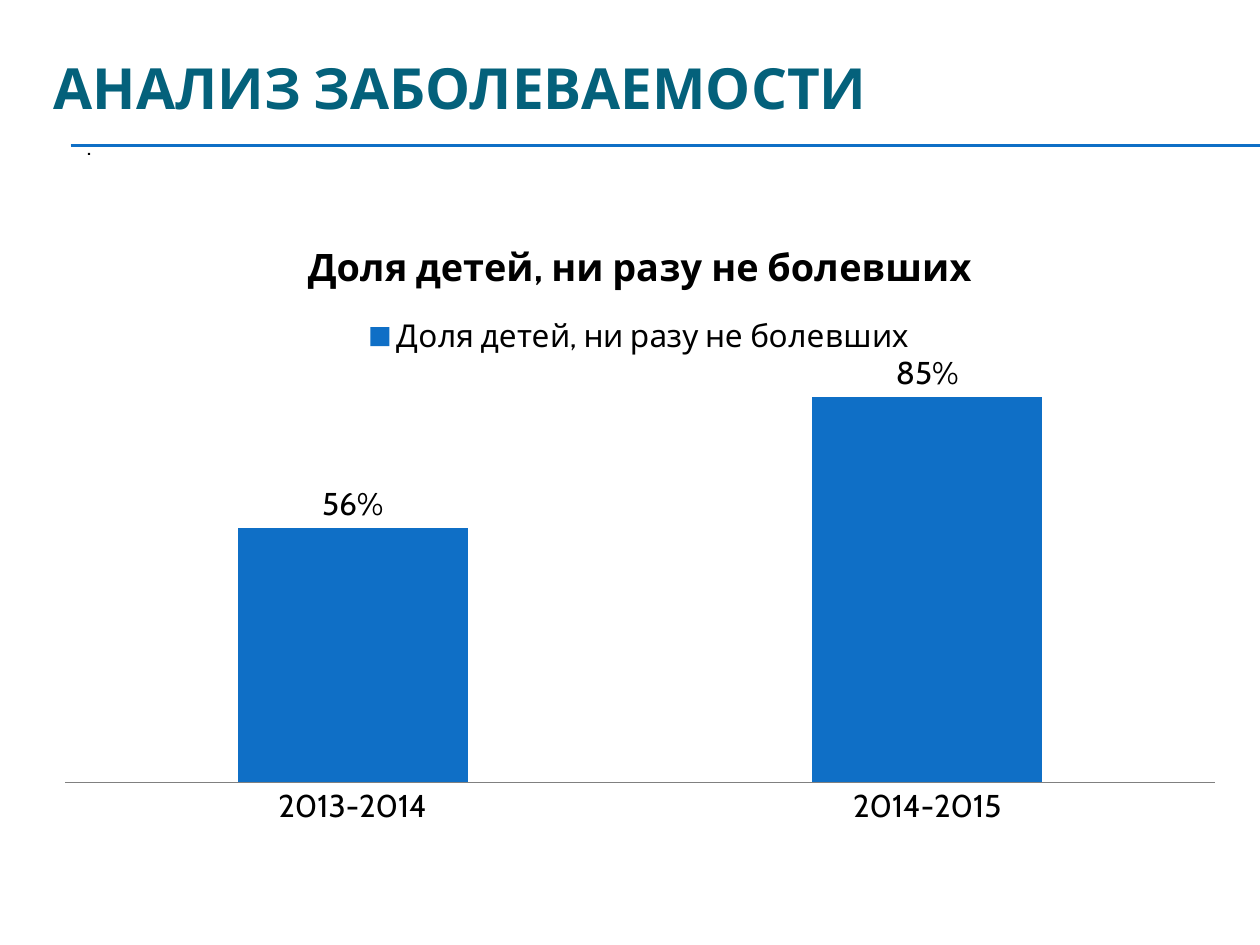
from lxml import etree
from pptx import Presentation, util as u
from pptx.chart.data import CategoryChartData
from pptx.dml.color import RGBColor
from pptx.enum import chart as ch, shapes, text
from pptx.oxml.ns import qn

BLUE, TEAL, BLACK, GREY = "0F6FC6", "04617B", "000000", "808080"


def color(code):
    return RGBColor.from_string(code)


def put(obj, vals):
    for key, val in vals.items():
        setattr(obj, key, val)


class Deck:
    font = "Cabin"

    def __init__(self, wide, high):
        self.prs = Presentation()
        put(self.prs, {"slide_width": u.Inches(wide), "slide_height": u.Inches(high)})
        self.slide = self.prs.slides.add_slide(self.prs.slide_layouts[6])

    def style(self, font, size, code, bold=False):
        put(font, {"name": self.font, "size": u.Pt(size), "bold": bold})
        font.color.rgb = color(code)

    def line(self, x1, y1, x2, y2, code, width):
        rule = self.slide.shapes.add_connector(
            shapes.MSO_CONNECTOR.STRAIGHT, *map(u.Inches, (x1, y1, x2, y2)))
        rule.line.color.rgb = color(code)
        rule.line.width = u.Pt(width)
        etree.SubElement(rule._element.spPr, qn("a:effectLst"))

    def text(self, words, box, size, code, bold=False, anchor=text.MSO_ANCHOR.TOP):
        frame = self.slide.shapes.add_textbox(*map(u.Inches, box)).text_frame
        put(frame, {"word_wrap": True, "vertical_anchor": anchor})
        para = frame.paragraphs[0]
        para.text = words
        for run in para.runs:
            self.style(run.font, size, code, bold)
        self.style(para.font, size, code, bold)

    def columns(self, name, cats, vals, box, size, code):
        data = CategoryChartData(number_format="0%")
        data.categories = cats
        data.add_series(name, vals)
        chart = self.slide.shapes.add_chart(
            ch.XL_CHART_TYPE.COLUMN_CLUSTERED, *map(u.Inches, box), data).chart
        self.style(chart.font, size, BLACK)

        # Title and legend
        chart.has_title = chart.has_legend = True
        para = chart.chart_title.text_frame.paragraphs[0]
        para.text = name
        self.style(para.runs[0].font, size * 1.2, BLACK, True)
        put(chart.legend, {"position": ch.XL_LEGEND_POSITION.TOP,
                           "include_in_layout": False})

        # Axes
        none = ch.XL_TICK_MARK.NONE
        put(chart.category_axis, {"major_tick_mark": none, "minor_tick_mark": none})
        chart.category_axis.format.line.color.rgb = color(GREY)
        put(chart.value_axis, {"visible": False, "has_major_gridlines": False,
                               "minimum_scale": 0, "maximum_scale": 0.9})

        # Bars and their labels
        plot = chart.plots[0]
        put(plot, {"vary_by_categories": False, "gap_width": 150,
                   "has_data_labels": True})
        put(plot.data_labels, {"show_value": True, "number_format": "0%",
                               "number_format_is_linked": False,
                               "position": ch.XL_LABEL_POSITION.OUTSIDE_END})
        fill = plot.series[0].format.fill
        fill.solid()
        fill.fore_color.rgb = color(code)


def main():
    deck = Deck(10, 7.5)

    # Double rule under the heading
    for y in (1.15, 1.16):
        deck.line(0.56, y, 10, y, BLUE, 0.75)

    # Heading and small text
    deck.text(".", (0.59, 0.99, 9.13, 0.34), 14, BLACK)
    deck.text("АНАЛИЗ ЗАБОЛЕВАЕМОСТИ\v", (0.33, 0.5, 9.5, 0.92), 32.4, TEAL,
              True, text.MSO_ANCHOR.MIDDLE)

    # Share of children by school year
    deck.columns("Доля детей, ни разу не болевших", ("2013-2014", "2014-2015"),
                 (0.56, 0.85), (0.33, 1.7, 9.5, 4.95), 18, BLUE)

    deck.prs.save("out.pptx")


if __name__ == "__main__":
    main()
